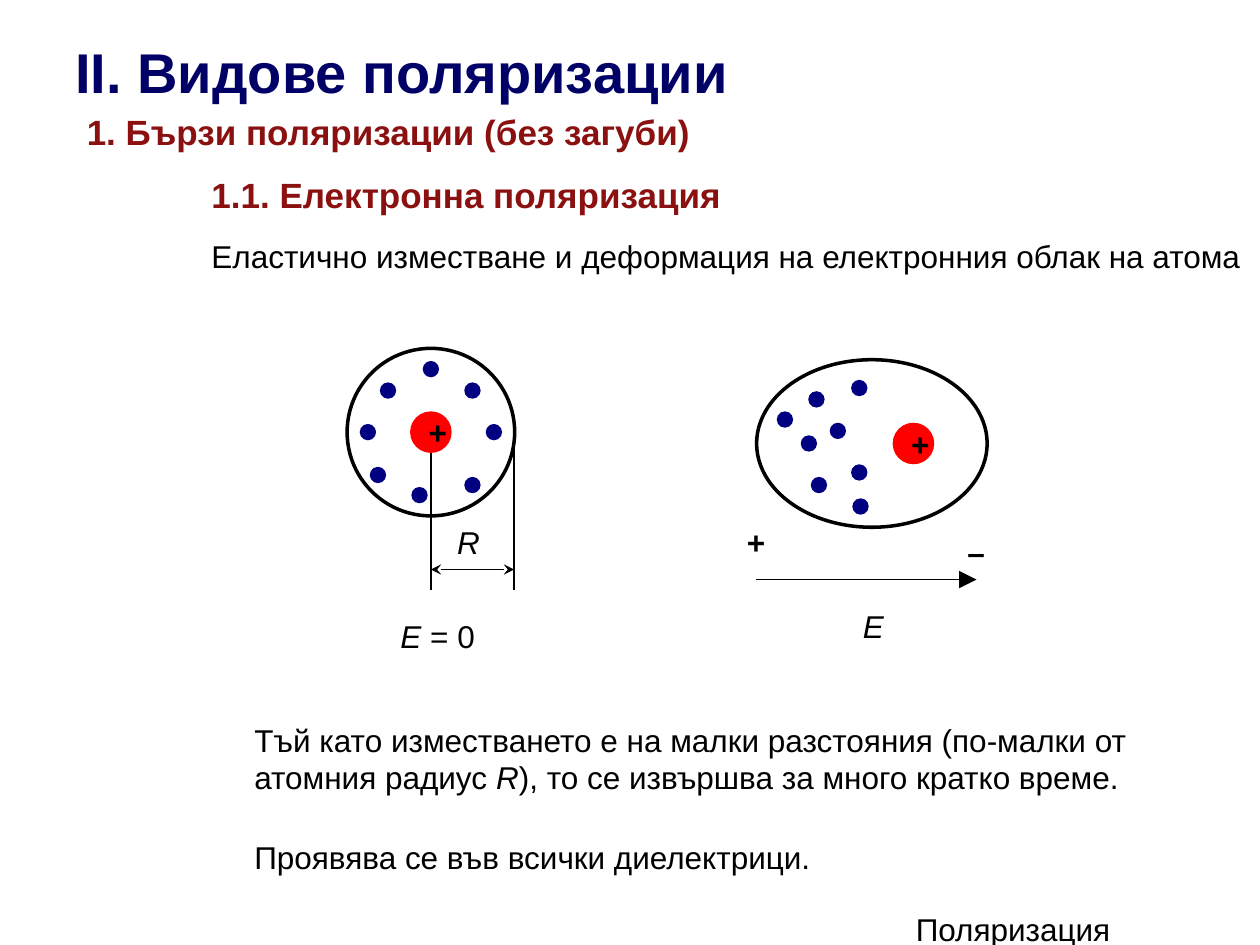
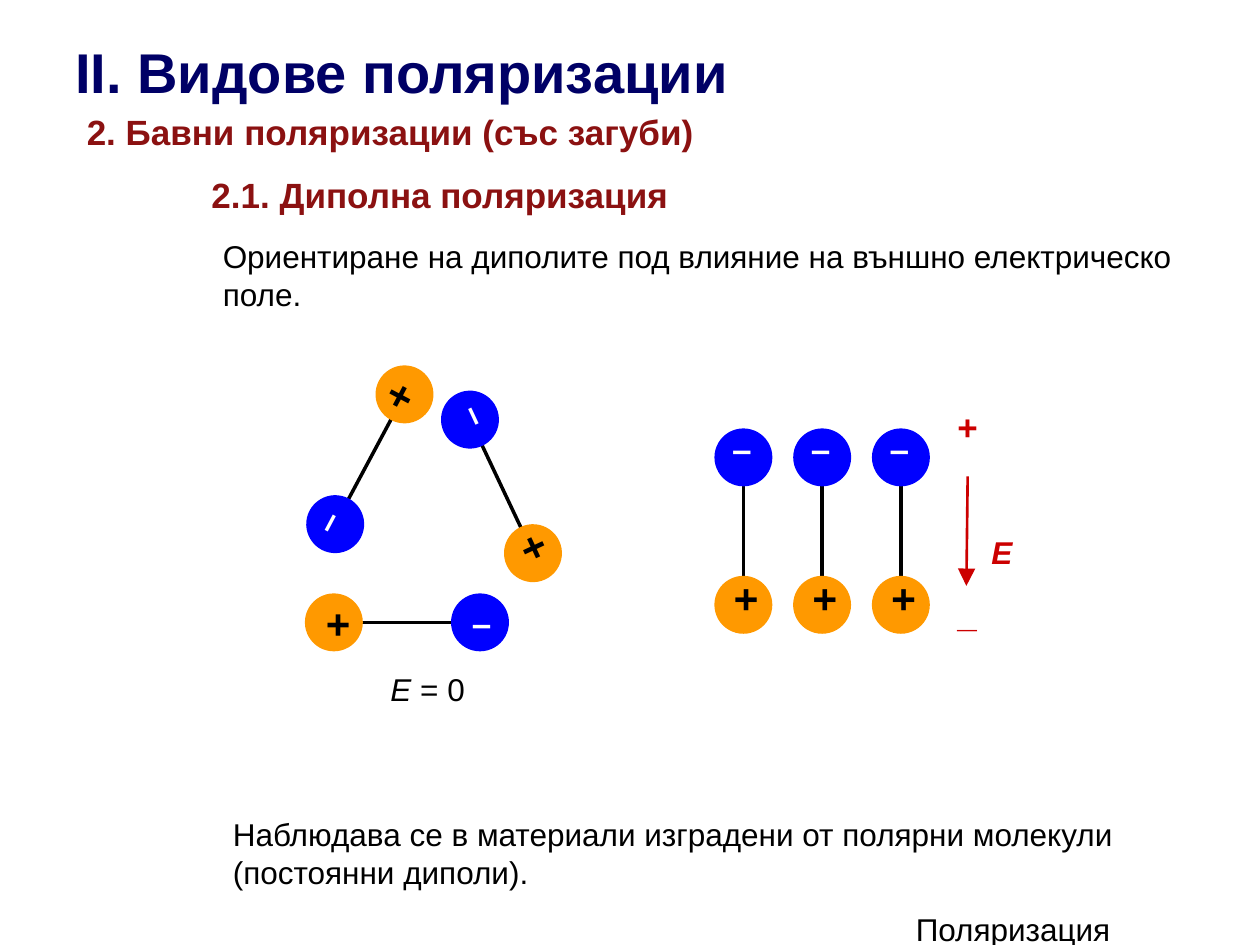
from dataclasses import dataclass
from math import hypot

from lxml.etree import SubElement
from pptx import Presentation
from pptx.dml.color import RGBColor
from pptx.enum.shapes import MSO_CONNECTOR, MSO_SHAPE
from pptx.enum.text import MSO_ANCHOR, PP_ALIGN
from pptx.oxml.ns import qn
from pptx.util import Inches, Pt


@dataclass(frozen=True)
class Theme:
    font: str = "Arial"
    title: str = "000066"
    heading: str = "8B1111"
    ink: str = "000000"
    white: str = "FFFFFF"
    nucleus: str = "FF0000"
    electron: str = "000080"
    positive: str = "FF9900"
    negative: str = "0000FF"
    field: str = "CC0000"
    title_size: int = 32
    sign_size: int = 24
    heading_size: int = 20
    body_size: int = 18
    thin: float = 0.75
    medium: float = 1.5
    thick: float = 2


class Deck:
    ELECTRON = 0.13
    NUCLEUS = 0.33
    POLE = 0.46

    def __init__(self, prs, theme):
        self.prs, self.theme, self.slide = prs, theme, None

    def new_slide(self, section, topic):
        """Start a slide with the footer, title and two headings."""
        t = self.theme
        self.slide = self.prs.slides.add_slide(self.prs.slide_layouts[6])
        self.text(7.17, 7.17, 2.33, 0.27, "Поляризация")
        self.text(0.5, 0.25, 5.39, 0.63, "ІІ. Видове поляризации",
                  size=t.title_size, color=t.title, bold=True, wrap=False)
        for x, y, heading in ((0.59, 0.83, section), (1.58, 1.33, topic)):
            self.text(x, y, 5.02, 0.43, heading, size=t.heading_size,
                      color=t.heading, bold=True)

    def run(self, p, text, size, color, bold=False, italic=False):
        r = p.add_run()
        r.text = text
        r.font.name, r.font.size = self.theme.font, Pt(size)
        r.font.bold, r.font.italic = bold, italic
        r.font.color.rgb = RGBColor.from_string(color)

    def text(self, x, y, w, h, *parts, size=None, color=None, bold=False,
             wrap=True):
        """Add a text box; a part is a string, or a 1-tuple for italics."""
        sp = self.slide.shapes.add_textbox(
            Inches(x), Inches(y), Inches(w), Inches(h))
        tf = sp.text_frame
        tf.word_wrap = wrap
        for part in parts:
            italic = isinstance(part, tuple)
            self.run(tf.paragraphs[0], part[0] if italic else part,
                     size or self.theme.body_size, color or self.theme.ink,
                     bold, italic)

    def label(self, x, y, w, *parts, **style):
        self.text(x, y, w, 0.4, *parts, wrap=False, **style)

    def ellipse(self, cx, cy, w, h, fill=None):
        """Add an ellipse about its centre: filled, or outlined only."""
        sp = self.slide.shapes.add_shape(
            MSO_SHAPE.OVAL, Inches(cx - w / 2), Inches(cy - h / 2),
            Inches(w), Inches(h))
        sp.shadow.inherit = False
        if fill:
            sp.fill.solid()
            sp.fill.fore_color.rgb = RGBColor.from_string(fill)
            sp.line.fill.background()
        else:
            sp.fill.background()
            sp.line.color.rgb = RGBColor.from_string(self.theme.ink)
            sp.line.width = Pt(self.theme.thick)
        return sp

    def charge(self, cx, cy, d, fill, sign, size, color, angle=0):
        sp = self.ellipse(cx, cy, d, d, fill)
        sp.rotation = angle
        tf = sp.text_frame
        tf.word_wrap = True
        tf.vertical_anchor = MSO_ANCHOR.MIDDLE
        p = tf.paragraphs[0]
        p.alignment = PP_ALIGN.CENTER
        self.run(p, sign, size, color, bold=True)

    def line(self, x1, y1, x2, y2, width, color=None, head=None, tail=None,
             arrow="lg"):
        cx = self.slide.shapes.add_connector(
            MSO_CONNECTOR.STRAIGHT, Inches(x1), Inches(y1), Inches(x2),
            Inches(y2))
        cx.line.color.rgb = RGBColor.from_string(color or self.theme.ink)
        cx.line.width = Pt(width)
        ln = cx.line._get_or_add_ln()
        for tag, kind in (("a:headEnd", head), ("a:tailEnd", tail)):
            if kind:
                SubElement(ln, qn(tag), type=kind, w=arrow, len=arrow)
        SubElement(cx._element.spPr, qn("a:effectLst"))

    def atom(self, cloud, nucleus, electrons):
        """Electron cloud (cx, cy, w, h), nucleus and electron centres."""
        t = self.theme
        self.ellipse(*cloud)
        self.charge(*nucleus, self.NUCLEUS, t.nucleus, "+", t.body_size, t.ink)
        for cx, cy in electrons:
            self.ellipse(cx, cy, self.ELECTRON, self.ELECTRON, t.electron)

    def dipole(self, plus, minus, plus_angle=0, minus_angle=0):
        """Two pole centres joined by a bond that ends inside the poles."""
        t = self.theme
        (px, py), (mx, my) = plus, minus
        length = hypot(mx - px, my - py)
        ux, uy = (mx - px) / length, (my - py) / length
        self.line(px + 0.1 * ux, py + 0.1 * uy,
                  mx - 0.14 * ux, my - 0.14 * uy, t.thick)
        self.charge(px, py, self.POLE, t.positive, "+", t.sign_size, t.ink,
                    plus_angle)
        self.charge(mx, my, self.POLE, t.negative, "–", t.heading_size,
                    t.white, minus_angle)


def electronic_polarization(deck):
    t = deck.theme
    deck.new_slide("1. Бързи поляризации (без загуби)",
                   "1.1. Електронна поляризация")
    deck.text(1.58, 1.83, 8.42, 0.4, "Еластично изместване и деформация на "
              "електронния облак на атома")
    deck.text(1.92, 5.67, 7.5, 0.7,
              "Тъй като изместването е на малки разстояния (по-малки от "
              "атомния радиус ", ("R",),
              "), то се извършва за много кратко време.")
    deck.text(1.92, 6.6, 7.5, 0.4, "Проявява се във всички диелектрици.")

    # Atom without a field, with its radius marked
    deck.label(3.08, 4.85, 0.79, ("Е",), " = 0")
    center_x, edge_x = 3.42, 4.08
    for x in (center_x, edge_x):
        deck.line(x, 3.35, x, 4.68, t.thin)
    deck.atom((center_x, 3.43, 1.33, 1.33), (center_x, 3.43),
              ((3.42, 2.93), (3.75, 3.1), (3.92, 3.43), (3.75, 3.85),
               (3.33, 3.93), (3, 3.77), (2.92, 3.43), (3.08, 3.1)))
    deck.label(3.53, 4.1, 0.38, ("R",))
    deck.line(center_x, 4.52, edge_x, 4.52, t.thin, head="stealth",
              tail="stealth", arrow="med")

    # Atom deformed by the field
    deck.atom((6.92, 3.52, 1.83, 1.33), (7.25, 3.52),
              ((6.82, 3.08), (6.65, 3.42), (6.23, 3.33), (6.82, 3.75),
               (6.83, 4.02), (6.5, 3.85), (6.42, 3.52), (6.48, 3.17)))
    deck.line(6, 4.6, 7.75, 4.6, t.thin, tail="triangle")
    deck.label(6.75, 4.77, 0.37, ("Е",))
    deck.label(5.83, 4.1, 0.35, "+", bold=True)
    deck.label(7.58, 4.18, 0.34, "–", bold=True)


def dipole_polarization(deck):
    t = deck.theme
    deck.new_slide("2. Бавни поляризации (със загуби)",
                   "2.1. Диполна поляризация")
    deck.text(1.67, 1.83, 8.33, 0.7, "Ориентиране на диполите под влияние на "
              "външно електрическо поле.")
    deck.text(1.75, 6.42, 8, 0.7, "Наблюдава се в материали изградени от "
              "полярни молекули (постоянни диполи).")

    # Dipoles aligned with the field
    deck.label(7.77, 4.18, 0.44, ("Е",), color=t.field, bold=True)
    deck.line(7.68, 3.78, 7.67, 4.65, t.medium, t.field, tail="triangle")
    for y, sign in ((3.17, "+"), (4.65, "_")):
        deck.label(7.5, y, 0.36, sign, size=t.heading_size, color=t.field,
                   bold=True)
    for i in range(3):
        x = 5.9 + 0.625 * i
        deck.dipole((x, 4.8), (x, 3.63), 270, 180)

    # Dipoles in disorder without a field
    deck.label(3, 5.27, 0.79, ("Е",), " = 0")
    deck.dipole((3.21, 3.13), (2.66, 4.16), 118, 118)
    deck.dipole((4.23, 4.39), (3.73, 3.33), 245, 245)
    deck.dipole((2.65, 4.94), (3.81, 4.94))


def main():
    prs = Presentation()
    prs.slide_width, prs.slide_height = Inches(10), Inches(7.5)
    deck = Deck(prs, Theme())
    electronic_polarization(deck)
    dipole_polarization(deck)
    prs.save("out.pptx")


if __name__ == "__main__":
    main()
